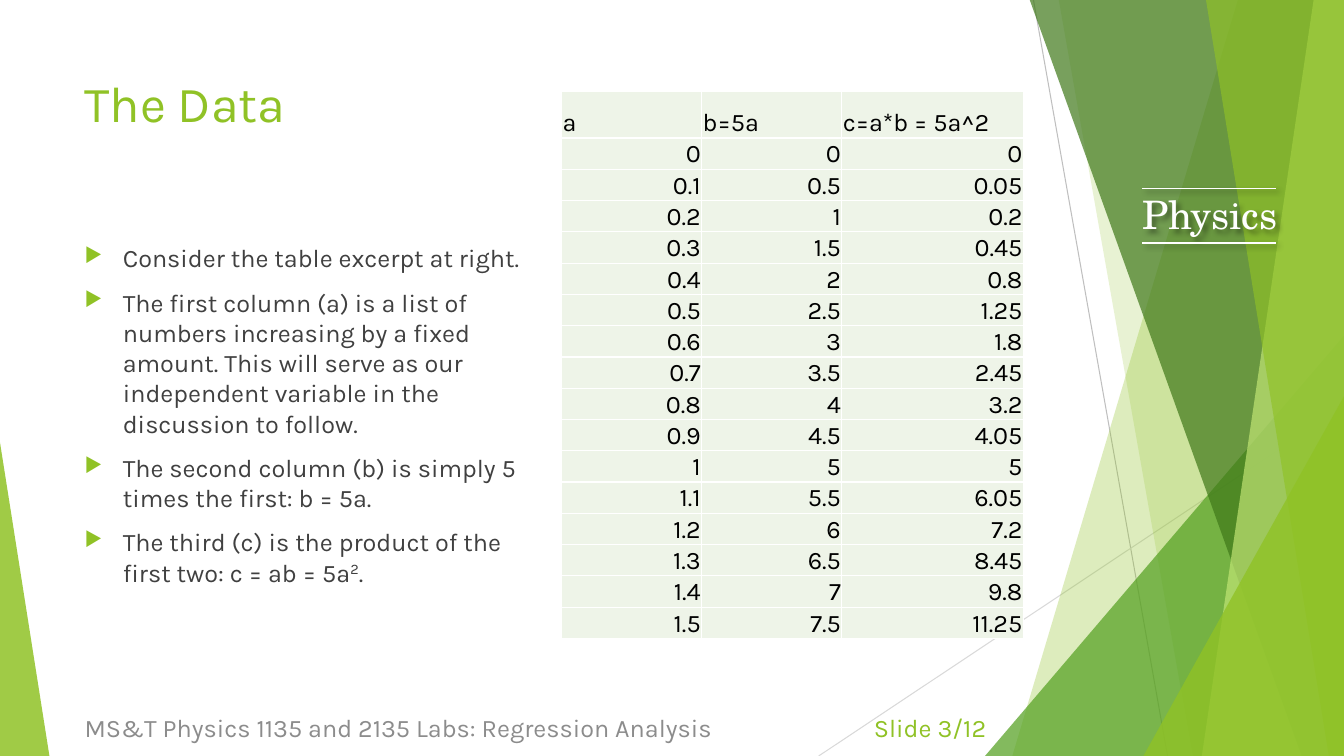
import pptx
import pptx.util
import pptx.dml.color
import pptx.enum.shapes
import pptx.enum.text
import pptx.oxml
import pptx.oxml.ns

EMU_PER_PX = 9144  # 100 px to the inch
NS = 'xmlns:a="http://schemas.openxmlformats.org/drawingml/2006/main"'
ALIGN = pptx.enum.text.PP_ALIGN
ANCHOR = pptx.enum.text.MSO_ANCHOR
LIME, GREEN, DARK, PALE = "90C226", "54A021", "3F7819", "C0E474"
WHITE, BLACK, CELL = "FFFFFF", "000000", "EEF4E8"
SHADOW = (f'<a:effectLst {NS}><a:outerShdw blurRad="50800" dist="38100" dir="2700000" '
          'algn="tl" rotWithShape="0"><a:srgbClr val="000000"><a:alpha val="40000"/>'
          '</a:srgbClr></a:outerShdw></a:effectLst>')


def px(n):
    return pptx.util.Emu(n * EMU_PER_PX)


def rgb(color):
    return pptx.dml.color.RGBColor.from_string(color)


def add_xml(parent, xml):
    parent.append(pptx.oxml.parse_xml(xml))


class SlideBuilder:
    def __init__(self, slide, font):
        self.s = slide
        self.font = font

    def line(self, x1, y1, x2, y2, color, width, shadow=False):
        cx = self.s.shapes.add_connector(pptx.enum.shapes.MSO_CONNECTOR.STRAIGHT,
                                         px(x1), px(y1), px(x2), px(y2))
        cx.line.color.rgb = rgb(color)
        cx.line.width = pptx.util.Pt(width)
        add_xml(cx._element.spPr, SHADOW if shadow else f"<a:effectLst {NS}/>")

    def paint(self, sp, color, alpha):
        sp.shadow.inherit = False
        sp.fill.solid()
        sp.fill.fore_color.rgb = rgb(color)
        sp.line.fill.background()
        clr = sp._element.spPr.find(".//" + pptx.oxml.ns.qn("a:srgbClr"))
        add_xml(clr, f'<a:alpha {NS} val="{alpha * 1000}"/>')

    def band(self, points, color, alpha):
        fb = self.s.shapes.build_freeform(*points[0], scale=EMU_PER_PX)
        fb.add_line_segments(points[1:], close=True)
        self.paint(fb.convert_to_shape(), color, alpha)

    def triangle(self, x, y, w, h, apex, color, alpha):
        sp = self.s.shapes.add_shape(pptx.enum.shapes.MSO_SHAPE.ISOSCELES_TRIANGLE,
                                     px(x), px(y), px(w), px(h))
        sp.adjustments[0] = apex
        self.paint(sp, color, alpha)

    def run(self, p, text, size, color, font=None, baseline=0):
        r = p.add_run()
        r.text = text
        r.font.size = pptx.util.Pt(size)
        r.font.name = font or self.font
        r.font.color.rgb = rgb(color)
        if baseline:
            r._r.get_or_add_rPr().set("baseline", str(baseline * 1000))

    def box(self, x, y, w, h, anchor=ANCHOR.TOP):
        sp = self.s.shapes.add_textbox(px(x), px(y), px(w), px(h))
        sp.text_frame.word_wrap = True
        sp.text_frame.vertical_anchor = anchor
        return sp

    def text(self, x, y, w, h, text, size, color, align=ALIGN.LEFT,
             anchor=ANCHOR.TOP, font=None, shadow=False):
        sp = self.box(x, y, w, h, anchor)
        p = sp.text_frame.paragraphs[0]
        p.alignment = align
        self.run(p, text, size, color, font)
        if shadow:
            add_xml(sp._element.spPr, SHADOW)

    def bullets(self, x, y, w, h, items, size, color):
        tf = self.box(x, y, w, h).text_frame
        for i, runs in enumerate(items):
            p = tf.add_paragraph() if i else tf.paragraphs[0]
            pPr = p._p.get_or_add_pPr()
            pPr.set("marL", str(px(38)))
            pPr.set("indent", str(px(-38)))
            add_xml(pPr, f'<a:buClr {NS}><a:srgbClr val="{LIME}"/></a:buClr>')
            add_xml(pPr, f'<a:buSzPct {NS} val="80000"/>')
            add_xml(pPr, f'<a:buChar {NS} char="▶"/>')
            if i:
                p.space_before = pptx.util.Pt(10)
            for text, baseline in runs:
                self.run(p, text, size, color, baseline=baseline)

    def cell(self, cell, text, align):
        cell.fill.solid()
        cell.fill.fore_color.rgb = rgb(CELL)
        cell.vertical_anchor = ANCHOR.BOTTOM
        cell.margin_left = cell.margin_right = cell.margin_top = px(1)
        cell.margin_bottom = 0
        p = cell.text_frame.paragraphs[0]
        p.alignment = align
        self.run(p, text, 18, BLACK)
        tcPr = cell._tc.get_or_add_tcPr()
        for i, side in enumerate(("lnL", "lnR", "lnT", "lnB")):
            tcPr.insert(i, pptx.oxml.parse_xml(
                f'<a:{side} {NS} w="12700"><a:solidFill><a:srgbClr val="{WHITE}"/>'
                f'</a:solidFill></a:{side}>'))

    def table(self, x, y, widths, head_h, row_h, rows):
        heights = [head_h] + [row_h] * (len(rows) - 1)
        tbl = self.s.shapes.add_table(len(rows), len(widths), px(x), px(y),
                                      px(sum(widths)), px(sum(heights))).table
        tbl.first_row = tbl.horz_banding = False
        for col, w in zip(tbl.columns, widths):
            col.width = px(w)
        for i, (row, h) in enumerate(zip(tbl.rows, heights)):
            row.height = px(h)
            for cell, value in zip(row.cells, rows[i]):
                self.cell(cell, value, ALIGN.RIGHT if i else ALIGN.LEFT)


def main():
    prs = pptx.Presentation()
    prs.slide_width, prs.slide_height = px(1333), px(750)
    b = SlideBuilder(prs.slides.add_slide(prs.slide_layouts[6]), "Karla")

    # Green facets at the right edge and the lower left corner
    b.line(1025, 0, 1158, 750, "BFBFBF", 0.75)
    b.line(1333, 403, 812, 750, "D9D9D9", 0.75)

    def facet(top, bottom, color, alpha):
        b.band([(top, -1), (1333, -1), (1333, 750), (bottom, 750)], color, alpha)

    facet(1228, 1004, LIME, 30)
    facet(1050, 1183, LIME, 20)
    b.triangle(977, 333, 356, 417, 1, GREEN, 72)
    facet(1021, 1291, DARK, 70)
    facet(1303, 1192, PALE, 70)
    facet(1196, 1318, LIME, 65)
    b.triangle(1134, 393, 199, 357, 1, LIME, 80)
    b.triangle(0, 439, 49, 311, 0, LIME, 85)

    # Department name between two rules
    b.text(1055, 184, 290, 57, "Physics", 28, WHITE, ALIGN.CENTER,
           font="TeX Gyre Schola", shadow=True)
    for y in (241, 187):
        b.line(1133, y, 1266, y, WHITE, 1, shadow=True)

    # Title and footer
    b.text(74, 67, 940, 144, "The Data", 36, LIME)
    b.text(74, 702, 689, 40, "MS&T Physics 1135 and 2135 Labs: Regression Analysis",
           18, "8C8C8C", anchor=ANCHOR.MIDDLE)
    b.text(787, 702, 201, 40, "Slide 3/12", 18, LIME, ALIGN.RIGHT, ANCHOR.MIDDLE)

    # Explanation
    b.bullets(74, 236, 484, 424, [
        [("Consider the table excerpt at right.", 0)],
        [("The first column (a) is a list of numbers increasing by a fixed amount. "
          "This will serve as our independent variable in the discussion to follow.", 0)],
        [("The second column (b) is simply 5 times the first: b = 5a.", 0)],
        [("The third (c) is the product of the first two: c = ab = 5a", 0),
         ("2", 30), (".", 0)],
    ], 18, "404040")

    # Data table: a in steps of 0.1, b = 5a, c = ab
    rows = [("a", "b=5a", "c=a*b = 5a^2")]
    rows += [(f"{n / 10:g}", f"{n / 2:g}", f"{n * n / 20:g}") for n in range(16)]
    b.table(557, 91, (139, 139, 180), 46, 30, rows)

    prs.save("out.pptx")


if __name__ == "__main__":
    main()
